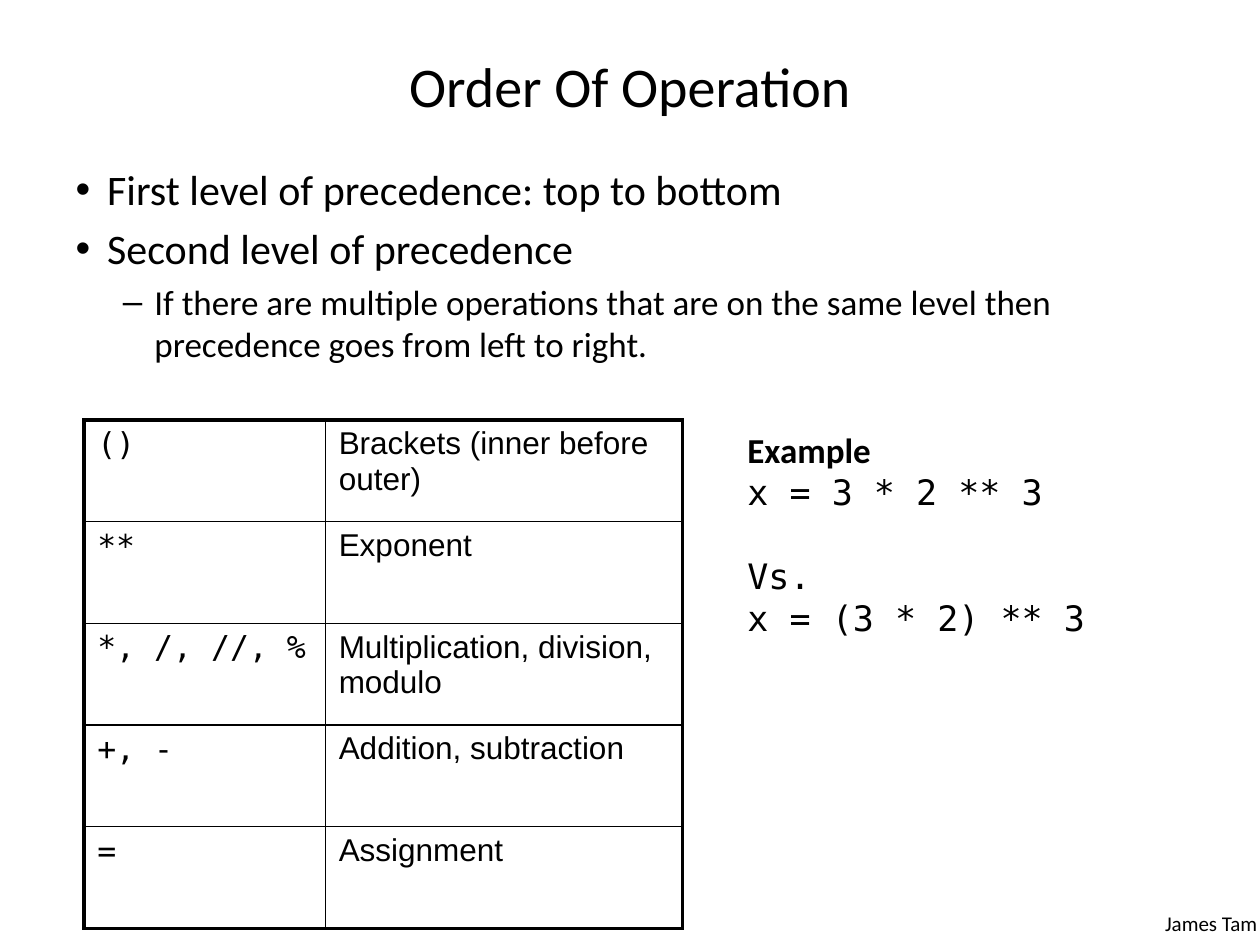
"""Builds the Order Of Operation slide with its precedence table and example."""
from dataclasses import dataclass

from lxml.etree import SubElement
from pptx import Presentation
from pptx.dml.color import RGBColor
from pptx.enum.text import MSO_ANCHOR as Anchor, MSO_AUTO_SIZE as AutoSize, PP_ALIGN as Align
from pptx.oxml.ns import qn
from pptx.util import Pt


@dataclass(frozen=True)
class Theme:
    black: RGBColor = RGBColor(0, 0, 0)
    text: str = "Calibri"
    code: str = "DejaVu Sans Mono"
    table: str = "Arial"
    title_size: int = 32
    body_size: int = 24
    detail_size: int = 20
    table_size: int = 18
    footer_size: int = 12
    outer_line: float = 2.25
    inner_line: float = 1


theme = Theme()


def format_runs(para, size, face, bold=False):
    for span in para.runs:
        span.font.size = Pt(size)
        span.font.name = face
        span.font.bold = bold
        span.font.color.rgb = theme.black


def add_border(cell, side, width):
    line = SubElement(cell._tc.get_or_add_tcPr(), qn(f"a:ln{side}"), w=str(Pt(width)))
    fill = SubElement(line, qn("a:solidFill"))
    SubElement(fill, qn("a:srgbClr"), val=str(theme.black))


deck = Presentation()
deck.slide_width, deck.slide_height = Pt(720), Pt(540)
page = deck.slides.add_slide(deck.slide_layouts[1])

title = page.shapes.title
title.left, title.top, title.width, title.height = Pt(36), Pt(20), Pt(648), Pt(57.6)
title.text_frame.text = "Order Of Operation"
title.text_frame.vertical_anchor = Anchor.MIDDLE
title.text_frame.auto_size = AutoSize.NONE
title.text_frame.paragraphs[0].alignment = Align.CENTER
format_runs(title.text_frame.paragraphs[0], theme.title_size, theme.text)

body = page.placeholders[1]
body.left, body.top, body.width, body.height = Pt(36), Pt(90), Pt(642), Pt(423)
body.text_frame.auto_size = AutoSize.NONE
points = [
    (0, "First level of precedence: top to bottom"),
    (0, "Second level of precedence"),
    (1, "If there are multiple operations that are on the same level then "
        "precedence goes from left to right."),
]
body.text_frame.text = "\n".join(text for level, text in points)
for para, (level, text) in zip(body.text_frame.paragraphs, points):
    para.level = level
    indent = para._p.get_or_add_pPr()
    indent.set("marL", str(Pt(18 + 27 * level)))
    indent.set("indent", str(Pt(-18)))
    format_runs(para, theme.detail_size if level else theme.body_size, theme.text)

operators = [
    ("()", "Brackets (inner before outer)"),
    ("**", "Exponent"),
    ("*, /, //, %", "Multiplication, division, modulo"),
    ("+, -", "Addition, subtraction"),
    ("=", "Assignment"),
]
last = len(operators) - 1
table = page.shapes.add_table(len(operators), 2, Pt(48), Pt(240), Pt(342), Pt(290.5)).table
table.first_row = table.horz_banding = False
table.columns[0].width, table.columns[1].width = Pt(138), Pt(204)
for row, texts in enumerate(operators):
    table.rows[row].height = Pt(58.1)
    for column, text in enumerate(texts):
        cell = table.cell(row, column)
        cell.margin_left = cell.margin_right = Pt(7.6)
        cell.margin_top = cell.margin_bottom = Pt(3.6)
        cell.text_frame.text = text
        format_runs(cell.text_frame.paragraphs[0], theme.table_size,
                    theme.table if column else theme.code)
        outer_sides = {"L": column == 0, "R": column == 1, "T": row == 0, "B": row == last}
        for side, is_outer in outer_sides.items():
            add_border(cell, side, theme.outer_line if is_outer else theme.inner_line)
        cell.fill.background()

example = page.shapes.add_textbox(Pt(420), Pt(241.2), Pt(288), Pt(128.2)).text_frame
example.word_wrap = True
example.text = "Example\nx = 3 * 2 ** 3\nVs.\nx = (3 * 2) ** 3"
for para in example.paragraphs:
    format_runs(para, theme.detail_size, theme.code)
format_runs(example.paragraphs[0], theme.detail_size, theme.text, bold=True)
example.paragraphs[2].space_before = Pt(24)

author = page.shapes.add_textbox(Pt(624), Pt(517), Pt(96), Pt(21.8)).text_frame
author.word_wrap = True
author.text = "James Tam"
author.paragraphs[0].alignment = Align.RIGHT
format_runs(author.paragraphs[0], theme.footer_size, theme.text)
author.margin_right = Pt(1.5)

deck.save("out.pptx")
